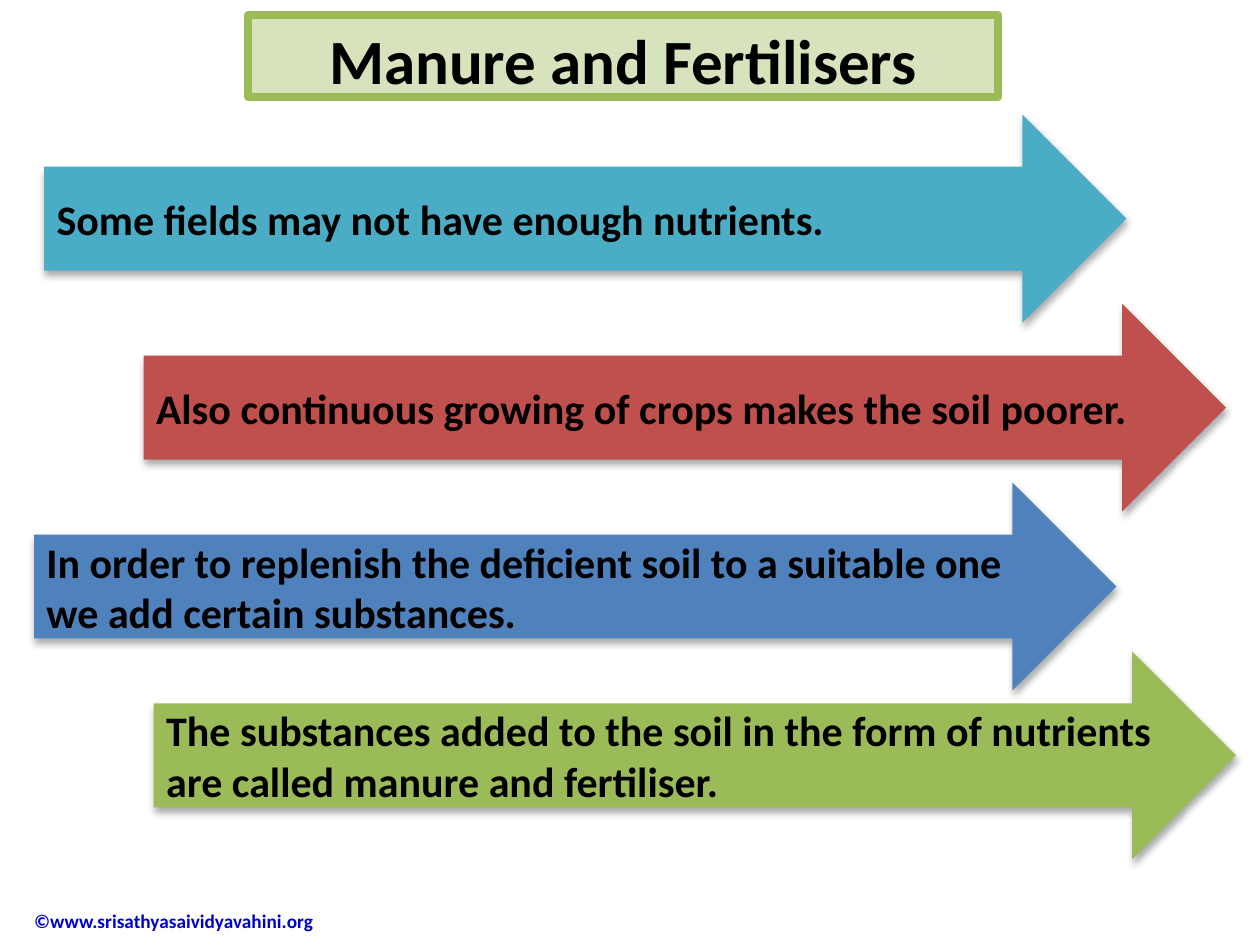
"""Build the Manure and Fertilisers slide."""
from lxml import etree
from pptx import Presentation
from pptx import util as u
from pptx.dml.color import RGBColor
from pptx.enum import shapes, text
from pptx.oxml.ns import qn

WIDE, HIGH = 10, 7.5
TITLE = "Manure and Fertilisers"
CREDIT = "©www.srisathyasaividyavahini.org"
SIZE = (8.59, 1.65)
STEPS = [
    ("Some fields may not have enough nutrients.", "4BACC6", 0.35, 0.91),
    ("Also continuous growing of crops makes the soil poorer.", "C0504D", 1.14, 2.41),
    ("In order to replenish the deficient soil to a suitable one we add certain substances.",
     "4F81BD", 0.27, 3.83),
    ("The substances added to the soil in the form of nutrients are called manure and fertiliser.",
     "9BBB59", 1.22, 5.17),
]


def color(code):
    """Turn a hex string into a colour."""
    return RGBColor.from_string(code)


def write(shape, words, size=24, ink="000000", align=text.PP_ALIGN.LEFT,
          anchor=text.MSO_ANCHOR.MIDDLE, left=0.1):
    """Put formatted bold text into a shape."""
    frame = shape.text_frame
    frame.word_wrap = True
    frame.vertical_anchor = anchor
    frame.margin_left = u.Inches(left)
    para = frame.paragraphs[0]
    para.alignment = align
    run = para.add_run()
    run.text = words
    font = run.font
    font.name, font.size, font.bold = "Calibri", u.Pt(size), True
    font.color.rgb = color(ink)


def draw(slide, kind, box, fill, line=None, width=0):
    """Add a filled preset shape, outlined if a line colour is given."""
    shape = slide.shapes.add_shape(kind, *map(u.Inches, box))
    shape.shadow.inherit = False
    shape.fill.solid()
    shape.fill.fore_color.rgb = color(fill)
    if line:
        shape.line.color.rgb = color(line)
        shape.line.width = u.Pt(width)
    else:
        shape.line.fill.background()
    return shape


def shade(shape):
    """Give a shape a soft shadow straight below it."""
    group = shape._element.spPr.find(qn("a:effectLst"))
    outer = etree.SubElement(group, qn("a:outerShdw"), blurRad=str(u.Pt(3.5)),
                             dist=str(u.Pt(2.2)), dir="5400000", rotWithShape="0")
    ink = etree.SubElement(outer, qn("a:srgbClr"), val="000000")
    etree.SubElement(ink, qn("a:alpha"), val="32000")


def main():
    """Build and save the slide."""
    deck = Presentation()
    deck.slide_width, deck.slide_height = u.Inches(WIDE), u.Inches(HIGH)
    slide = deck.slides.add_slide(deck.slide_layouts[6])

    foot = slide.shapes.add_textbox(*map(u.Inches, (-0.33, 7.1, 3.02, 0.41)))
    write(foot, CREDIT, size=11, ink="0000CC", left=0.6)

    head = draw(slide, shapes.MSO_SHAPE.RECTANGLE, (1.97, 0.12, 5.95, 0.65),
                "D6E3BC", line="9BBB59", width=4.5)
    write(head, TITLE, size=36, align=text.PP_ALIGN.CENTER, anchor=text.MSO_ANCHOR.TOP)

    for words, fill, left, top in STEPS:
        arrow = draw(slide, shapes.MSO_SHAPE.RIGHT_ARROW, (left, top, *SIZE), fill)
        shade(arrow)
        write(arrow, words)

    deck.save("out.pptx")


if __name__ == "__main__":
    main()
